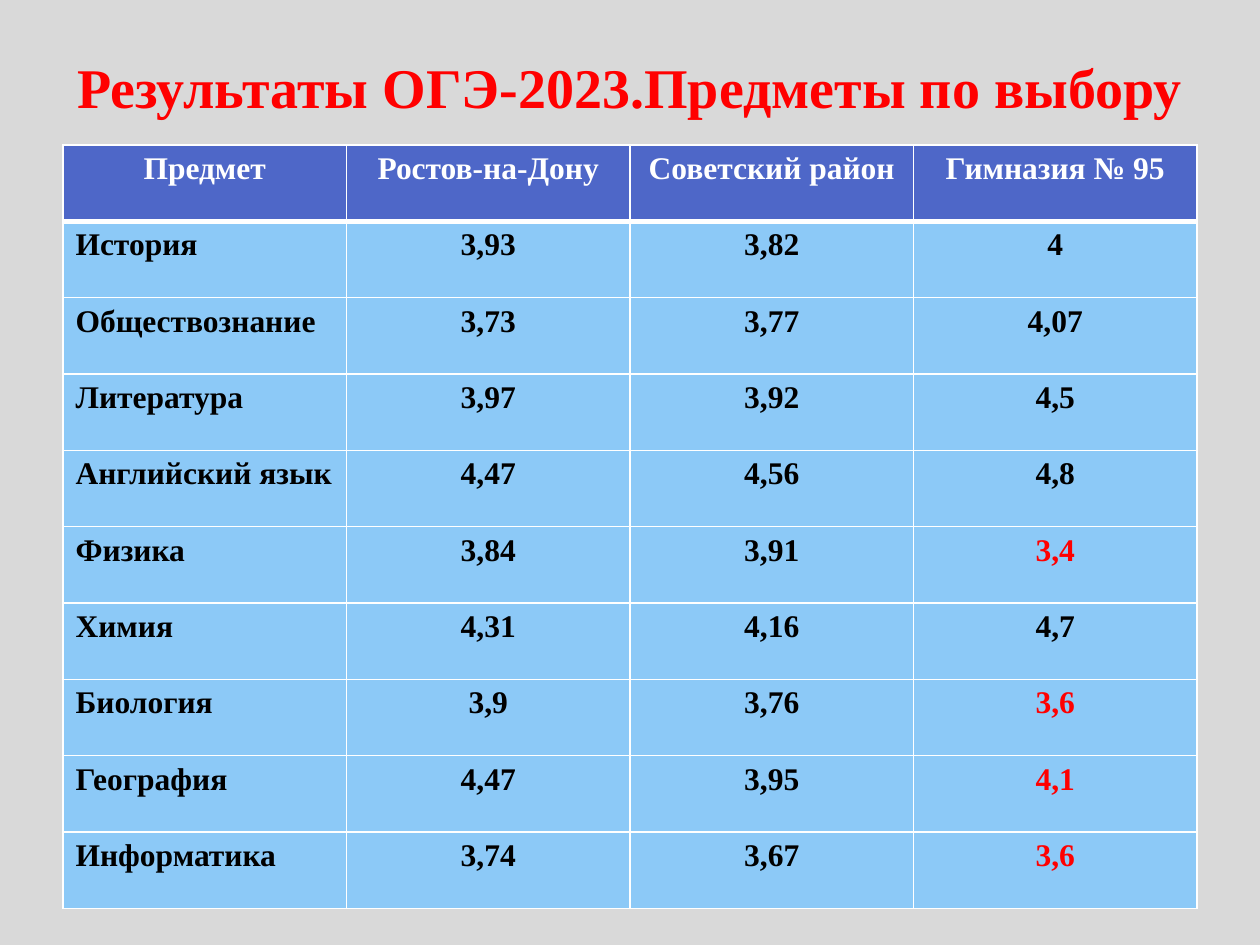
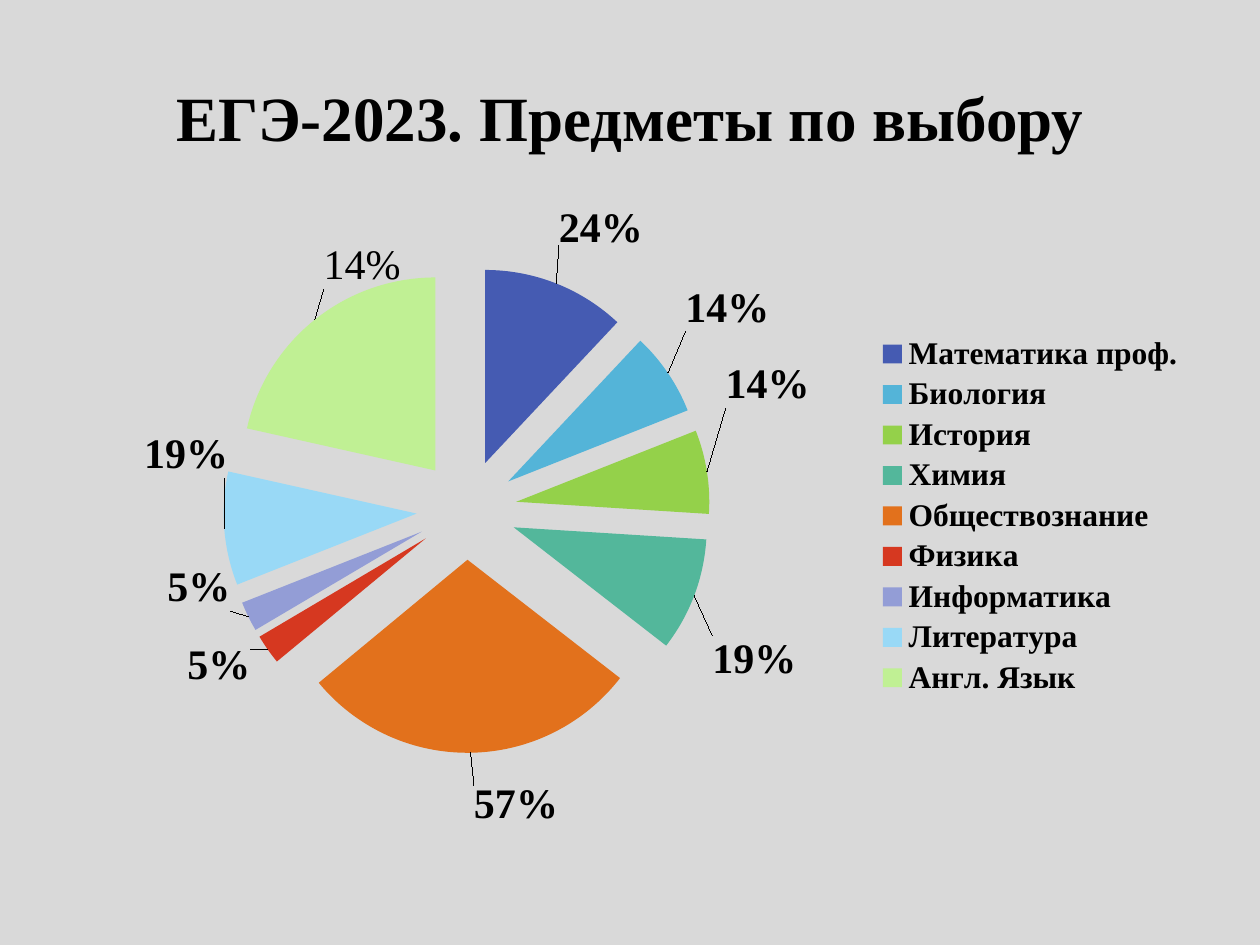
from dataclasses import dataclass

import pptx
import pptx.chart.data
import pptx.dml.color
import pptx.enum.chart
import pptx.enum.text
import pptx.oxml
import pptx.oxml.ns
import pptx.util
from pptx.util import Inches

ALIGN = pptx.enum.text.PP_ALIGN


@dataclass(frozen=True)
class Theme:
    font: str = "Times New Roman"
    background: str = "D9D9D9"
    header: str = "4E67C8"
    cell: str = "8CC9F7"
    white: str = "FFFFFF"
    black: str = "000000"
    red: str = "FF0000"
    table_title_size: int = 32
    chart_title_size: int = 36
    body_size: int = 18
    label_size: int = 24


@dataclass(frozen=True)
class Result:
    subject: str
    city: str
    district: str
    school: str
    below: bool = False


@dataclass(frozen=True)
class Slice:
    subject: str
    share: float
    color: str
    shift_x: float
    shift_y: float
    caption: str = ""


THEME = Theme()
EXPLOSION = 26
HEADINGS = ("Предмет", "Ростов-на-Дону", "Советский район", "Гимназия № 95")
RESULTS = (
    Result("История", "3,93", "3,82", "4"),
    Result("Обществознание", "3,73", "3,77", "4,07"),
    Result("Литература", "3,97", "3,92", "4,5"),
    Result("Английский язык", "4,47", "4,56", "4,8"),
    Result("Физика", "3,84", "3,91", "3,4", True),
    Result("Химия", "4,31", "4,16", "4,7"),
    Result("Биология", "3,9", "3,76", "3,6", True),
    Result("География", "4,47", "3,95", "4,1", True),
    Result("Информатика", "3,74", "3,67", "3,6", True),
)
SLICES = (
    Slice("Математика проф.", 0.24, "455BB2", 0, -0.05),
    Slice("Биология", 0.14, "54B4D8", 0.01, -0.06),
    Slice("История", 0.14, "94D14A", 0.01, -0.1),
    Slice("Химия", 0.19, "53B79B", 0.01, 0.06),
    Slice("Обществознание", 0.57, "E2711C", 0.04, 0.04),
    Slice("Физика", 0.05, "D63820", -0.01, -0.02),
    Slice("Информатика", 0.05, "939DD6", -0.01, -0.09),
    Slice("Литература", 0.19, "99D9F6", 0.01, -0.12),
    Slice("Англ. Язык", 0.43, "C0F094", 0.08, -0.04, "14%"),
)


def rgb(color: str) -> pptx.dml.color.RGBColor:
    return pptx.dml.color.RGBColor.from_string(color)


def style_font(font, size: int, color: str = THEME.black, bold: bool = True) -> None:
    font.name = THEME.font
    font.size = pptx.util.Pt(size)
    font.bold = bold
    font.color.rgb = rgb(color)


def write_text(frame, text: str, *, size: int, color: str = THEME.black,
               bold: bool = True, align=ALIGN.CENTER) -> None:
    para = frame.paragraphs[0]
    para.alignment = align
    span = para.add_run()
    span.text = text
    style_font(span.font, size, color, bold)


def add_page(deck, title: str, height: float, size: int, color: str):
    page = deck.slides.add_slide(deck.slide_layouts.get_by_name("Title Only"))
    box = page.shapes.title
    box.left, box.top = Inches(0.5), Inches(0.3)
    box.width, box.height = Inches(9), Inches(height)
    frame = box.text_frame
    frame.word_wrap = True
    frame.auto_size = pptx.enum.text.MSO_AUTO_SIZE.NONE
    frame.vertical_anchor = pptx.enum.text.MSO_ANCHOR.MIDDLE
    write_text(frame, title, size=size, color=color)
    return page


def set_borders(cell, top: int, bottom: int) -> None:
    properties = cell._tc.get_or_add_tcPr()
    widths = {"lnL": 1, "lnR": 1, "lnT": top, "lnB": bottom}
    for place, (side, width) in enumerate(widths.items()):
        properties.insert(place, pptx.oxml.parse_xml(
            f'<a:{side} {pptx.oxml.ns.nsdecls("a")} w="{pptx.util.Pt(width)}">'
            f'<a:solidFill><a:srgbClr val="{THEME.white}"/></a:solidFill></a:{side}>'))


def fill_cell(cell, text: str, row: int, color: str, align) -> None:
    cell.fill.solid()
    cell.fill.fore_color.rgb = rgb(THEME.cell if row else THEME.header)
    set_borders(cell, top=3 if row == 1 else 1, bottom=1 if row else 3)
    write_text(cell.text_frame, text, size=THEME.body_size, color=color, align=align)


def add_results_table(page) -> None:
    table = page.shapes.add_table(len(RESULTS) + 1, len(HEADINGS), Inches(0.5),
                                  Inches(1.15), Inches(9), Inches(6.06)).table
    for column, heading in enumerate(HEADINGS):
        fill_cell(table.cell(0, column), heading, 0, THEME.white, ALIGN.CENTER)
    for row, result in enumerate(RESULTS, start=1):
        values = (result.subject, result.city, result.district, result.school)
        for column, value in enumerate(values):
            marked = result.below and column == len(values) - 1
            fill_cell(table.cell(row, column), value, row,
                      THEME.red if marked else THEME.black,
                      ALIGN.CENTER if column else ALIGN.LEFT)


def layout_xml(x: float, y: float, extra: str = "", target: str = ""):
    return pptx.oxml.parse_xml(
        f'<c:layout {pptx.oxml.ns.nsdecls("c")}><c:manualLayout>{target}'
        f'<c:x val="{x}"/><c:y val="{y}"/>{extra}</c:manualLayout></c:layout>')


def place_plot(chart) -> None:
    area = chart._chartSpace.xpath("c:chart/c:plotArea")[0]
    for layout in area.xpath("c:layout"):
        area.remove(layout)
    area.insert(0, layout_xml(
        0.14, 0.1, '<c:w val="0.43"/><c:h val="0.78"/>',
        '<c:layoutTarget val="inner"/><c:xMode val="edge"/><c:yMode val="edge"/>'))


def format_labels(labels) -> None:
    labels.show_value = True
    labels.show_percentage = False
    labels.number_format = "0%"
    labels.number_format_is_linked = False
    labels.position = pptx.enum.chart.XL_LABEL_POSITION.OUTSIDE_END
    style_font(labels.font, THEME.label_size)


def format_slice(point, piece: Slice) -> None:
    point.format.fill.solid()
    point.format.fill.fore_color.rgb = rgb(piece.color)
    point.format.line.fill.background()
    label = point.data_label
    if piece.caption:
        write_text(label.text_frame, piece.caption, size=THEME.label_size, bold=False)
    else:
        style_font(label.font, THEME.label_size)
    label.position = pptx.enum.chart.XL_LABEL_POSITION.OUTSIDE_END


def add_subject_chart(page) -> None:
    data = pptx.chart.data.CategoryChartData(number_format="0%")
    data.categories = [piece.subject for piece in SLICES]
    data.add_series("Series 1", [piece.share for piece in SLICES])
    chart = page.shapes.add_chart(pptx.enum.chart.XL_CHART_TYPE.PIE, Inches(0.51),
                                  Inches(1.62), Inches(9), Inches(4.95), data).chart
    chart.has_title = False
    style_font(chart.font, THEME.body_size, bold=False)
    chart.has_legend = True
    chart.legend.position = pptx.enum.chart.XL_LEGEND_POSITION.RIGHT
    chart.legend.include_in_layout = False
    style_font(chart.legend.font, THEME.body_size)
    place_plot(chart)
    plot = chart.plots[0]
    plot.vary_by_categories = True
    series = plot.series[0]
    series._element.xpath("c:tx")[0].addnext(pptx.oxml.parse_xml(
        f'<c:explosion {pptx.oxml.ns.nsdecls("c")} val="{EXPLOSION}"/>'))
    format_labels(series.data_labels)
    for index, piece in enumerate(SLICES):
        format_slice(series.points[index], piece)
    for mark, piece in zip(series._element.xpath("c:dLbls/c:dLbl"), SLICES):
        mark.xpath("c:idx")[0].addnext(layout_xml(piece.shift_x, piece.shift_y))
        for text_style in mark.xpath("c:txPr"):
            text_style.addprevious(pptx.oxml.parse_xml(
                f'<c:numFmt {pptx.oxml.ns.nsdecls("c")} formatCode="0%" sourceLinked="0"/>'))


def main() -> None:
    deck = pptx.Presentation()
    deck.slide_width, deck.slide_height = Inches(10), Inches(7.5)
    backdrop = deck.slide_master.background.fill
    backdrop.solid()
    backdrop.fore_color.rgb = rgb(THEME.background)
    add_results_table(add_page(deck, "Результаты ОГЭ-2023.Предметы по выбору", 0.77,
                               THEME.table_title_size, THEME.red))
    add_subject_chart(add_page(deck, "ЕГЭ-2023. Предметы по выбору", 1.25,
                               THEME.chart_title_size, THEME.black))
    deck.save("out.pptx")


if __name__ == "__main__":
    main()
